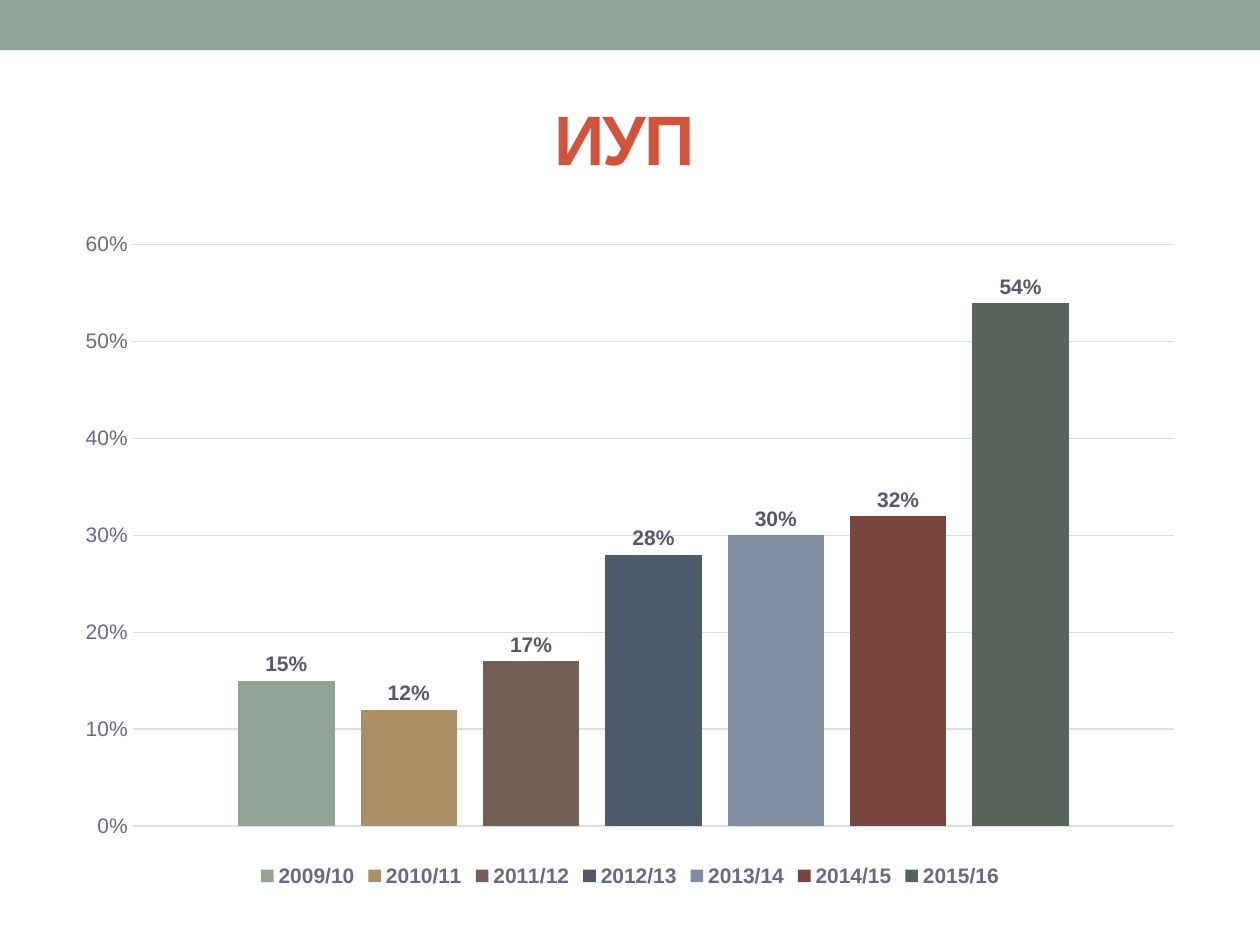
from pptx import Presentation
from pptx.chart.data import CategoryChartData
from pptx.dml.color import RGBColor
from pptx.enum.chart import XL_CHART_TYPE, XL_LABEL_POSITION, XL_LEGEND_POSITION, XL_TICK_MARK
from pptx.enum.shapes import MSO_SHAPE
from pptx.enum.text import MSO_ANCHOR, PP_ALIGN
from pptx.util import Inches, Pt

COLUMNS = XL_CHART_TYPE.COLUMN_CLUSTERED
OUTSIDE = XL_LABEL_POSITION.OUTSIDE_END
BOTTOM = XL_LEGEND_POSITION.BOTTOM
NO_TICK = XL_TICK_MARK.NONE
RECTANGLE = MSO_SHAPE.RECTANGLE
MIDDLE = MSO_ANCHOR.MIDDLE
LEFT = PP_ALIGN.LEFT

WIDTH, HEIGHT = Inches(10), Inches(7.5)
TITLE_ONLY = 5
SAGE = RGBColor(0x93, 0xA2, 0x99)
RED = RGBColor(0xD2, 0x53, 0x3C)
INK = RGBColor(0x29, 0x29, 0x34)
AXIS_GREY = RGBColor(0x69, 0x69, 0x86)
LABEL_GREY = RGBColor(0x57, 0x57, 0x6E)
GRID_GREY = RGBColor(0xDC, 0xDC, 0xE3)

TITLE_FONT = {"name": "Arial", "size": Pt(40), "bold": True}
CHART_FONT = {"name": "Arial", "size": Pt(10)}
AXIS_FONT = {"name": "Arial", "size": Pt(12), "bold": False}
BOLD_FONT = {**AXIS_FONT, "bold": True}
AXIS_FORMAT = {
    "minimum_scale": 0,
    "maximum_scale": 0.6,
    "major_unit": 0.1,
    "major_tick_mark": NO_TICK,
    "minor_tick_mark": NO_TICK,
    "has_major_gridlines": True,
}
PERCENT_FORMAT = {"number_format": "0%", "number_format_is_linked": False}
LABEL_FORMAT = {**PERCENT_FORMAT, "show_value": True, "position": OUTSIDE}

YEARS = [
    ("2009/10", 0.15, SAGE),
    ("2010/11", 0.12, RGBColor(0xAD, 0x8F, 0x67)),
    ("2011/12", 0.17, RGBColor(0x72, 0x60, 0x56)),
    ("2012/13", 0.28, RGBColor(0x4C, 0x5A, 0x6A)),
    ("2013/14", 0.30, RGBColor(0x80, 0x8D, 0xA0)),
    ("2014/15", 0.32, RGBColor(0x79, 0x46, 0x3D)),
    ("2015/16", 0.54, RGBColor(0x56, 0x64, 0x5B)),
]


def share_box(left, top, width, height):
    """Turn shares of the slide's size into a box of lengths."""
    return (int(left * WIDTH), int(top * HEIGHT),
            int(width * WIDTH), int(height * HEIGHT))


def apply_format(target, values):
    """Set each attribute named in a dict of format values."""
    for name, value in values.items():
        setattr(target, name, value)


def style_font(font, values, color):
    """Give a font its format values and colour."""
    apply_format(font, values)
    font.color.rgb = color


def add_band(page, box):
    """Draw the plain coloured band in its box."""
    band = page.shapes.add_shape(RECTANGLE, *box)
    band.shadow.inherit = False
    band.fill.solid()
    band.fill.fore_color.rgb = SAGE
    band.line.fill.background()


def fill_title(page, box, text):
    """Place the title placeholder in its box and write its text."""
    title = page.shapes.title
    apply_format(title, dict(zip(("left", "top", "width", "height"), box)))
    apply_format(title.text_frame, {"vertical_anchor": MIDDLE, "word_wrap": True})
    para = title.text_frame.paragraphs[0]
    para.alignment = LEFT
    span = para.add_run()
    span.text = text
    style_font(span.font, TITLE_FONT, RED)
    span.font._element.set("spc", "-100")


def style_axes(chart):
    """Hide the category axis and format the percentage axis."""
    chart.category_axis.visible = False
    axis = chart.value_axis
    apply_format(axis, AXIS_FORMAT)
    apply_format(axis.tick_labels, PERCENT_FORMAT)
    style_font(axis.tick_labels.font, AXIS_FONT, AXIS_GREY)
    axis.format.line.fill.background()
    grid = axis.major_gridlines.format.line
    grid.width = Pt(0.75)
    grid.color.rgb = GRID_GREY


def style_legend(chart):
    """Put the legend below the columns."""
    chart.has_legend = True
    apply_format(chart.legend, {"position": BOTTOM, "include_in_layout": False})
    style_font(chart.legend.font, BOLD_FONT, AXIS_GREY)


def add_year_chart(page, box):
    """Add the column chart with one series for each school year."""
    data = CategoryChartData(number_format="0%")
    data.categories = ["1"]
    for year, value, _ in YEARS:
        data.add_series(year, [value])
    chart = page.shapes.add_chart(COLUMNS, *box, data).chart
    chart.has_title = False
    style_font(chart.font, CHART_FONT, INK)
    style_axes(chart)
    style_legend(chart)
    plot = chart.plots[0]
    apply_format(plot, {"gap_width": 219, "overlap": -27, "vary_by_categories": False})
    for series, (_, _, color) in zip(plot.series, YEARS):
        series.format.fill.solid()
        series.format.fill.fore_color.rgb = color
        apply_format(series.data_labels, LABEL_FORMAT)
        style_font(series.data_labels.font, BOLD_FONT, LABEL_GREY)


def main():
    """Build the slide and save the deck."""
    deck = Presentation()
    apply_format(deck, {"slide_width": WIDTH, "slide_height": HEIGHT})
    page = deck.slides.add_slide(deck.slide_layouts[TITLE_ONLY])
    add_band(page, share_box(0, 0, 1, 0.053))
    fill_title(page, share_box(0.43, 0.09, 0.18, 0.11), "ИУП")
    add_year_chart(page, share_box(0.05, 0.233, 0.9, 0.711))
    deck.save("out.pptx")


if __name__ == "__main__":
    main()
